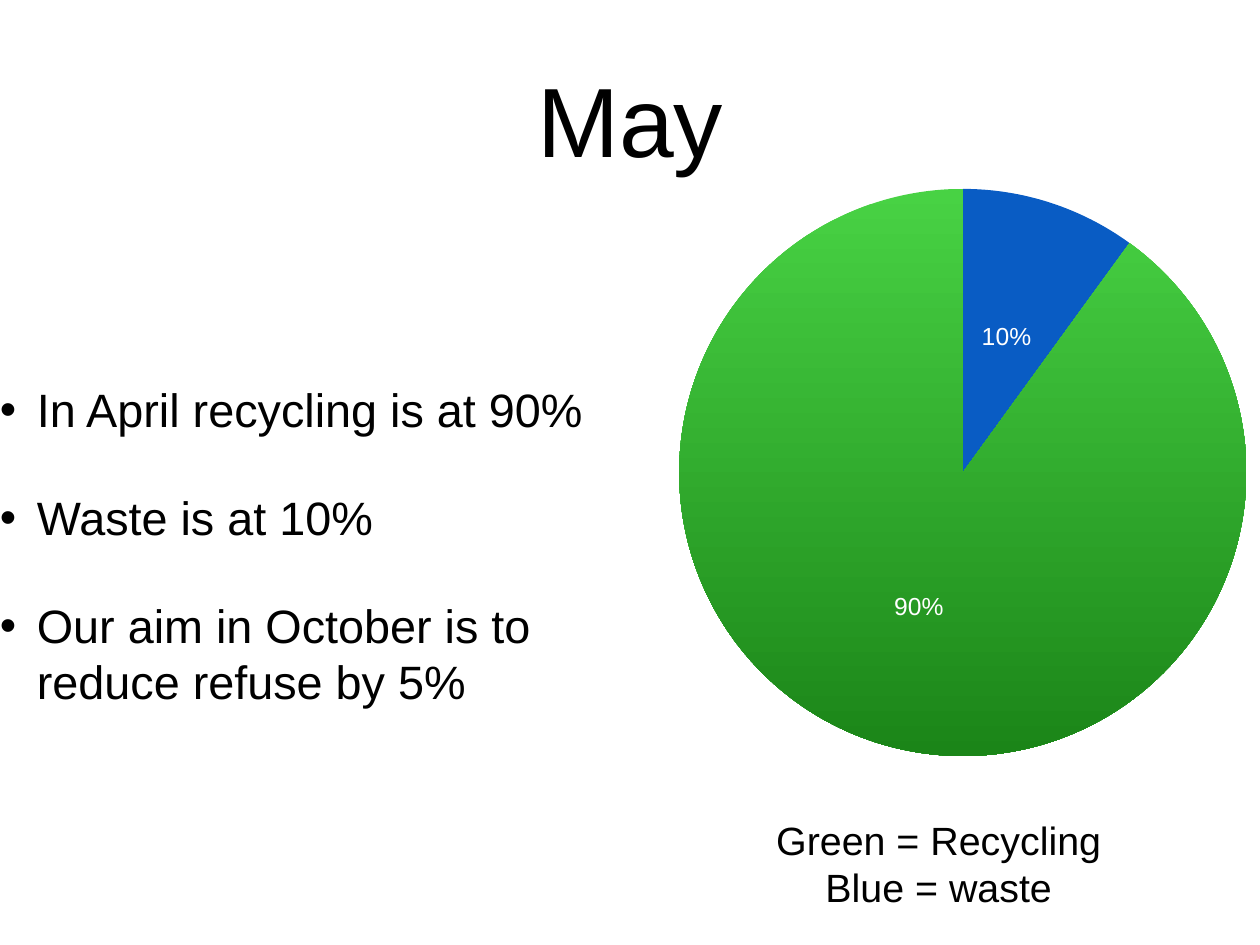
from lxml import etree
from pptx import Presentation, util as u
from pptx.chart import data
from pptx.dml import color
from pptx.enum import chart as ch, text
from pptx.oxml import ns, parse_xml

Pt = u.Pt
FONT = "Arial"
COLORS = {
    "text": "000000",
    "label": "FFFFFF",
    "waste": "095CC4",
    "recycling_top": "48D244",
    "recycling_bottom": "1B8518",
}


def rgb(name):
    return color.RGBColor.from_string(COLORS[name])


def add_text(left, top, width, height, lines, size, align, anchor):
    s = prs.slides[0].shapes.add_textbox(Pt(left), Pt(top), Pt(width), Pt(height))
    tf = s.text_frame
    tf.word_wrap = True
    tf.vertical_anchor = anchor
    tf.margin_left = tf.margin_top = tf.margin_right = tf.margin_bottom = 0
    for i, line in enumerate(lines):
        p = tf.add_paragraph() if i else tf.paragraphs[0]
        p.alignment = align
        r = p.add_run()
        r.text = line
        r.font.name = FONT
        r.font.size = Pt(size)
        r.font.color.rgb = rgb("text")
    return tf


prs = Presentation()
prs.slide_width, prs.slide_height = Pt(1024), Pt(768)
sp = prs.slides.add_slide(prs.slide_layouts[6]).shapes
ALIGN, ANCHOR = text.PP_ALIGN, text.MSO_ANCHOR

# Title
add_text(100, 0, 824, 192, ["May"], 80, ALIGN.CENTER, ANCHOR.MIDDLE)

# Pie chart
pie_data = data.CategoryChartData(number_format="General")
pie_data.categories = ["1", "2"]
pie_data.add_series("Region 1", [10, 90])
chart = sp.add_chart(ch.XL_CHART_TYPE.PIE, Pt(552), Pt(153.5),
                     Pt(461), Pt(461), pie_data).chart
chart.has_title = False
chart.has_legend = False
chart.font.name = FONT
chart.font.size = Pt(10)
chart.font.color.rgb = rgb("text")

# Slices: solid waste, shaded recycling
plot = chart.plots[0]
points = plot.series[0].points
waste, recycling = (points[i].format for i in range(2))
waste.fill.solid()
waste.fill.fore_color.rgb = rgb("waste")
recycling.fill.gradient()
recycling.fill.gradient_angle = 270
for stop, name in zip(recycling.fill.gradient_stops,
                      ("recycling_top", "recycling_bottom")):
    stop.color.rgb = rgb(name)
for part in (waste, recycling):
    part.line.fill.background()

# Percent labels
plot.has_data_labels = True
labels = plot.data_labels
labels.show_percentage = True
labels.show_value = False
labels.number_format = "#,##0%"
labels.number_format_is_linked = False
labels.position = ch.XL_LABEL_POSITION.CENTER
labels.font.name = FONT
labels.font.size = Pt(20)
labels.font.color.rgb = rgb("label")

# Let the pie fill the whole chart frame
area = chart._chartSpace.find(".//" + ns.qn("c:plotArea"))
for old in area.findall(ns.qn("c:layout")):
    area.remove(old)
layout = parse_xml(
    f'<c:layout {ns.nsdecls("c")}><c:manualLayout><c:layoutTarget val="inner"/>'
    '<c:xMode val="edge"/><c:yMode val="edge"/><c:x val="0"/><c:y val="0"/>'
    '<c:w val="1"/><c:h val="1"/></c:manualLayout></c:layout>')
area.insert(0, layout)

# Bullets
tf = add_text(0, 218, 518, 450,
              ["In April recycling is at 90%",
               "Waste is at 10%",
               "Our aim in October is to reduce refuse by 5%"],
              38, ALIGN.LEFT, ANCHOR.MIDDLE)
for p in tf.paragraphs:
    p.space_before = Pt(42)
    pPr = p._p.get_or_add_pPr()
    pPr.set("marL", str(Pt(30)))
    pPr.set("indent", str(-Pt(30)))
    etree.SubElement(pPr, ns.qn("a:buFont")).set("typeface", FONT)
    etree.SubElement(pPr, ns.qn("a:buChar")).set("char", "•")

# Colour key
add_text(554, 663, 418, 89, ["Green = Recycling", "Blue = waste"],
         32, ALIGN.CENTER, ANCHOR.TOP)

prs.save("out.pptx")
